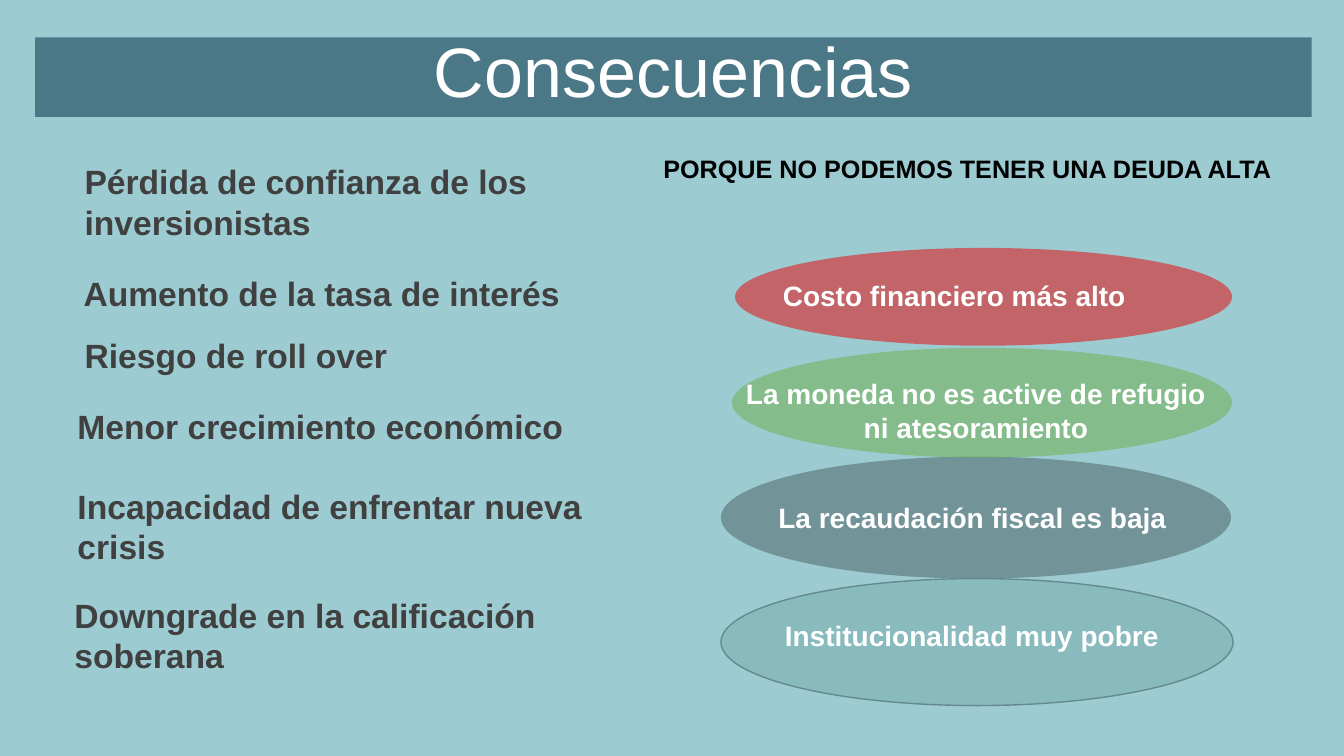
import lxml.etree
import pptx
import pptx.dml.color
import pptx.enum.shapes
import pptx.enum.text
import pptx.oxml.ns
import pptx.util

Inches = pptx.util.Inches
ALIGN = pptx.enum.text.PP_ALIGN
ANCHOR = pptx.enum.text.MSO_ANCHOR
SHAPE = pptx.enum.shapes.MSO_SHAPE


def color(hex_string):
    return pptx.dml.color.RGBColor.from_string(hex_string)


def write_text(frame, text, size, fill, font="Arial", bold=True, align=ALIGN.LEFT,
               anchor=ANCHOR.TOP, line_spacing=None, space_before=None):
    frame.word_wrap = True
    frame.vertical_anchor = anchor
    paragraph = frame.paragraphs[0]
    paragraph.alignment = align
    if line_spacing is not None:
        paragraph.line_spacing = line_spacing
    if space_before is not None:
        paragraph.space_before = pptx.util.Pt(space_before)
    run = paragraph.add_run()
    run.text = text
    run.font.name = font
    run.font.size = pptx.util.Pt(size)
    run.font.bold = bold
    run.font.color.rgb = color(fill)


class SlideBuilder:
    """Holds the style and the current slide, and adds each kind of element."""

    background = "9CCCD2"
    banner = "4A7886"
    light = "FFFFFF"
    dark = "404040"

    def __init__(self, slide):
        self.slide = slide
        slide.background.fill.solid()
        slide.background.fill.fore_color.rgb = color(self.background)

    def shape(self, kind, box, fill, opacity=100, line=None):
        shape = self.slide.shapes.add_shape(kind, *map(Inches, box))
        shape.shadow.inherit = False
        shape.fill.solid()
        shape.fill.fore_color.rgb = color(fill)
        if opacity < 100:
            fill_color = shape._element.spPr.find(pptx.oxml.ns.qn("a:solidFill"))[0]
            lxml.etree.SubElement(fill_color, pptx.oxml.ns.qn("a:alpha"), val=str(opacity * 1000))
        if line:
            shape.line.color.rgb = color(line)
            shape.line.width = pptx.util.Pt(1)
        else:
            shape.line.fill.background()
        return shape

    def title(self, text, box):
        bar = self.shape(SHAPE.RECTANGLE, box, self.banner)
        write_text(bar.text_frame, text, 50, self.light, bold=False, align=ALIGN.CENTER,
                   anchor=ANCHOR.MIDDLE, line_spacing=0.8, space_before=10)

    def text(self, text, box, **style):
        text_box = self.slide.shapes.add_textbox(*map(Inches, box))
        write_text(text_box.text_frame, text, **style)

    def consequence(self, text, left, top, height):
        self.text(text, (left, top, 5.29, height), size=24, fill=self.dark)

    def reason_label(self, text, box):
        self.text(text, box, size=20, fill=self.light, align=ALIGN.CENTER)


def main():
    presentation = pptx.Presentation()
    presentation.slide_width = Inches(13.33)
    presentation.slide_height = Inches(7.5)
    builder = SlideBuilder(presentation.slides.add_slide(presentation.slide_layouts[6]))

    builder.title("Consecuencias", (0.35, 0.37, 12.66, 0.79))

    one_line, two_lines = 0.5, 0.91
    consequences = [
        ("Pérdida de confianza de los inversionistas", 0.74, 1.55, two_lines),
        ("Aumento de la tasa de interés", 0.73, 2.66, one_line),
        ("Riesgo de roll over", 0.74, 3.27, one_line),
        ("Menor crecimiento económico", 0.67, 3.98, one_line),
        ("Incapacidad de enfrentar nueva crisis", 0.67, 4.77, two_lines),
        ("Downgrade en la calificación soberana", 0.64, 5.85, two_lines),
    ]
    for consequence in consequences:
        builder.consequence(*consequence)

    builder.text("PORQUE NO PODEMOS TENER UNA DEUDA ALTA", (6.48, 1.45, 6.39, 0.43),
                 size=18, fill="000000", align=ALIGN.JUSTIFY, line_spacing=1.07)

    reasons = [
        ("Costo financiero más alto", (7.61, 2.71, 3.71, 0.44),
         (7.29, 2.46, 4.93, 0.97), "EA0000", 50, None),
        ("La recaudación fiscal es baja", (7.54, 4.92, 4.21, 0.44),
         (7.15, 4.53, 5.06, 1.21), "4A5D62", 50, None),
        ("La moneda no es active de refugio ni atesoramiento", (7.27, 3.69, 4.82, 0.77),
         (7.26, 3.45, 4.96, 1.09), "70AD47", 50, None),
        ("Institucionalidad muy pobre", (7.61, 6.09, 4.06, 0.44),
         (7.15, 5.74, 5.08, 1.26), "88BABE", 100, "658A8D"),
    ]
    for text, label_box, ellipse_box, fill, opacity, line in reasons:
        builder.shape(SHAPE.OVAL, ellipse_box, fill, opacity, line)
        builder.reason_label(text, label_box)

    presentation.save("out.pptx")


if __name__ == "__main__":
    main()
